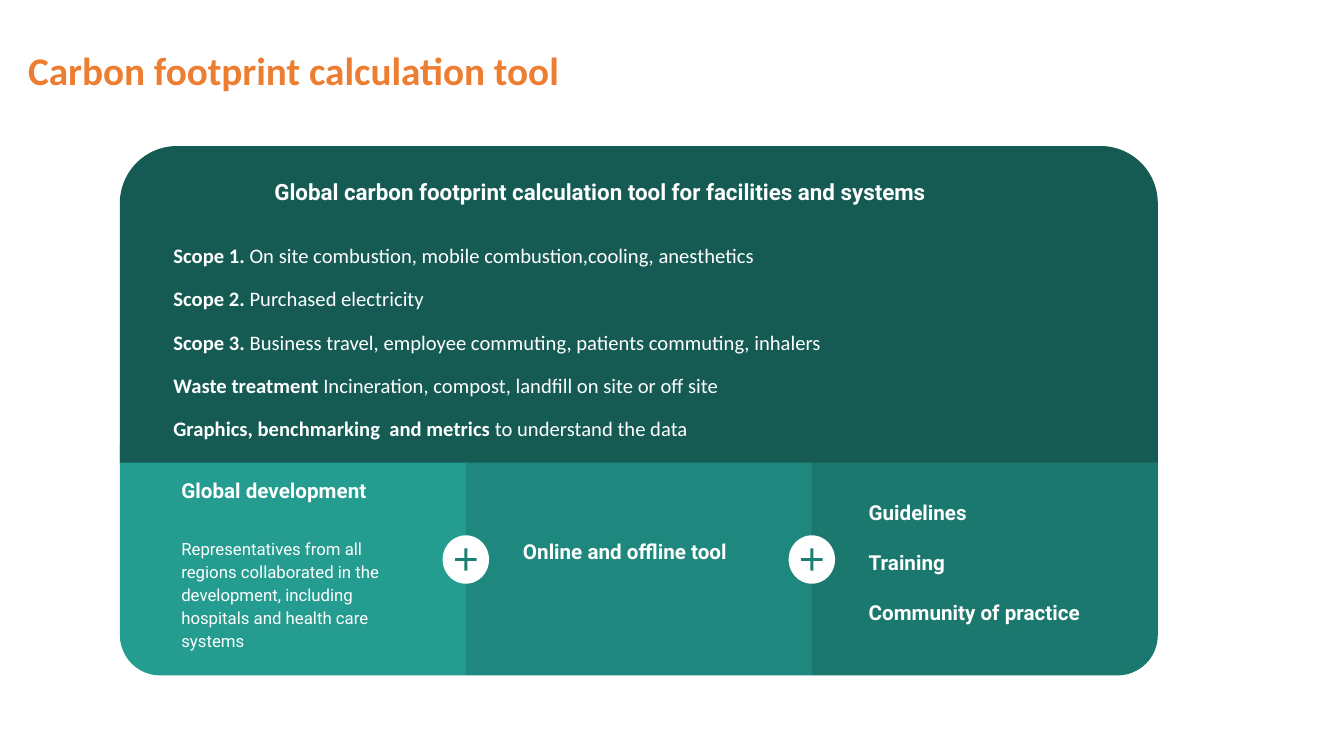
from dataclasses import dataclass

from pptx import Presentation
from pptx.dml.color import RGBColor
from pptx.enum.shapes import MSO_SHAPE
from pptx.enum.text import MSO_ANCHOR, PP_ALIGN
from pptx.util import Cm, Pt


@dataclass(frozen=True)
class Theme:
    """Colours, fonts and type sizes of the slide."""
    orange: str = "ED7D31"
    white: str = "FFFFFF"
    darkest: str = "155B54"
    light: str = "249C90"
    middle: str = "1F887E"
    dark: str = "1B786E"
    plus: str = "1D7E74"
    sans: str = "Calibri"
    accent: str = "Roboto"
    title: float = 28
    heading: float = 16
    label: float = 14.7
    body: float = 12


class SlideBuilder:
    """Draws panels, text and plus badges on one slide."""

    def __init__(self, slide, theme):
        """Keep the slide and its theme."""
        self.shapes = slide.shapes
        self.theme = theme

    def panel(self, kind, box, color, adjustments=(), rotation=0, flip=False):
        """Add a borderless filled shape."""
        panel = self.shapes.add_shape(kind, *map(Cm, box))
        panel.shadow.inherit = False
        panel.fill.solid()
        panel.fill.fore_color.rgb = RGBColor.from_string(color)
        panel.line.fill.background()
        for index, value in enumerate(adjustments):
            panel.adjustments[index] = value
        panel.rotation = rotation
        if flip:
            panel._element.spPr.xfrm.set("flipH", "1")

    def text(self, box, lines, size, font=None, color=None, inset=0.33,
             anchor=MSO_ANCHOR.TOP, align=PP_ALIGN.LEFT, gap=0, spacing=None):
        """Add paragraphs given as (bold part, regular part) pairs."""
        frame = self.shapes.add_textbox(*map(Cm, box)).text_frame
        frame.word_wrap = True
        frame.vertical_anchor = anchor
        frame.margin_left = frame.margin_right = Cm(inset)
        frame.margin_top = frame.margin_bottom = Cm(min(inset, 0.33) if inset > 0.3 else 0.13)
        for index, parts in enumerate(lines):
            paragraph = frame.paragraphs[0] if index == 0 else frame.add_paragraph()
            paragraph.alignment = align
            if spacing:
                paragraph.line_spacing = spacing
            if index:
                paragraph.space_before = Pt(gap)
            for part, bold in zip(parts, (True, False)):
                if part:
                    run = paragraph.add_run()
                    run.text = part
                    run.font.bold = bold
                    run.font.size = Pt(size)
                    run.font.name = font or self.theme.accent
                    run.font.color.rgb = RGBColor.from_string(color or self.theme.white)

    def plus_badge(self, center_x, center_y):
        """Add a white disc with a plus sign, centred on a point."""
        for kind, width, height, color, adjustments in (
                (MSO_SHAPE.OVAL, 1.17, 1.22, self.theme.white, ()),
                (MSO_SHAPE.MATH_PLUS, 0.74, 0.76, self.theme.plus, (0.1,))):
            box = (center_x - width / 2, center_y - height / 2, width, height)
            self.panel(kind, box, color, adjustments)


def main():
    """Build and save the slide."""
    theme = Theme()
    presentation = Presentation()
    presentation.slide_width, presentation.slide_height = Cm(33.87), Cm(19.05)
    slide = presentation.slides.add_slide(presentation.slide_layouts[6])
    builder = SlideBuilder(slide, theme)

    left, column, bottom = 3.02, 8.72, 17.02
    second, third = left + column, left + 2 * column
    lower_top = 11.18
    lower_height = bottom - lower_top

    builder.text((0.46, 0, 29.21, 3.68), [("Carbon footprint calculation tool", "")],
                 theme.title, theme.sans, theme.orange, inset=0.25,
                 anchor=MSO_ANCHOR.MIDDLE, spacing=0.9)

    builder.panel(MSO_SHAPE.ROUND_1_RECTANGLE, (left, lower_top, column, lower_height),
                  theme.light, (0.174,), rotation=180)
    builder.panel(MSO_SHAPE.ROUND_2_SAME_RECTANGLE, (second, 10.08, column, bottom - 10.08),
                  theme.middle, (0.181, 0))
    builder.panel(MSO_SHAPE.ROUND_1_RECTANGLE, (third, lower_top, column, lower_height),
                  theme.dark, (0.174,), rotation=180, flip=True)
    builder.panel(MSO_SHAPE.ROUND_2_SAME_RECTANGLE, (left, 3.68, 3 * column, 7.98),
                  theme.darkest, (0.181, 0))

    builder.text((4.5, 4.17, 21.39, 2.24),
                 [("Global carbon footprint calculation tool for facilities and systems ", "")],
                 theme.heading, align=PP_ALIGN.CENTER)
    scopes = [
        ("Scope 1. ", "On site combustion, mobile combustion,cooling, anesthetics"),
        ("Scope 2. ", "Purchased electricity"),
        ("Scope 3. ", "Business travel, employee commuting, patients commuting, inhalers"),
        ("Waste treatment", " Incineration, compost, landfill on site or off site"),
        ("Graphics, benchmarking  and metrics ", "to understand the data"),
    ]
    builder.text((4.04, 5.79, 24.13, 5.87), scopes, theme.label, theme.sans, gap=13.3)

    builder.text((4.24, 11.73, 6.53, 1.7), [("Global development", "")], theme.label)
    builder.text((4.24, 13.16, 6.53, 3.02),
                 [("", "Representatives from all regions collaborated in the development, "
                       "including hospitals and health care systems")],
                 theme.body, spacing=1.15)
    builder.text((12.85, 13.26, 6.53, 1.7), [("Online and offline tool", "")], theme.label)
    support = [("Guidelines", ""), ("Training", ""), ("Community of practice", "")]
    builder.text((21.56, 12.27, 6.53, 3.68), support, theme.label, gap=18)

    for boundary in (second, third):
        builder.plus_badge(boundary, 14.1)

    presentation.save("out.pptx")


if __name__ == "__main__":
    main()
